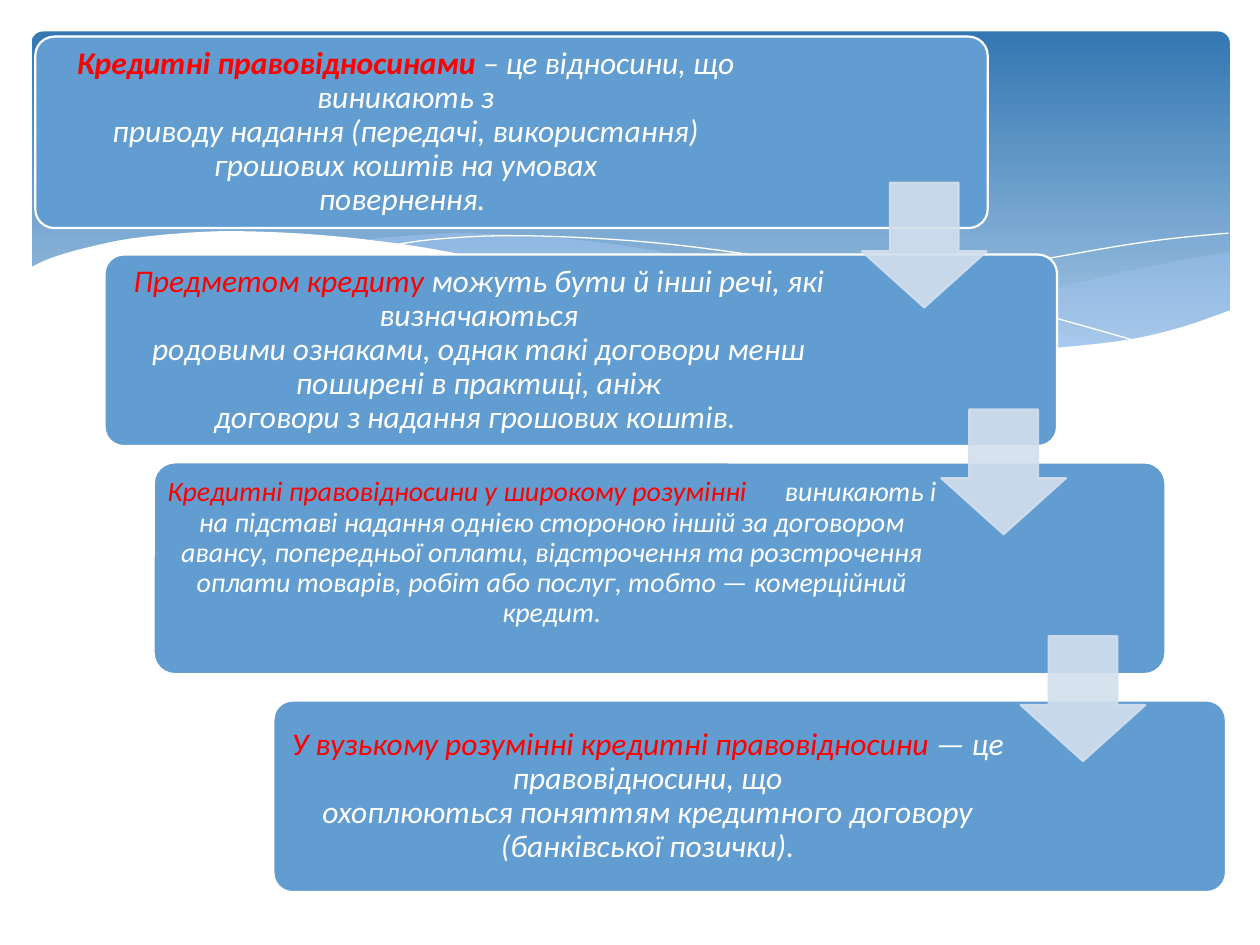
from dataclasses import dataclass

from lxml import etree
from pptx import Presentation
from pptx import util as u
from pptx.dml.color import RGBColor
from pptx.enum import shapes, text
from pptx.oxml import ns


@dataclass(frozen=True)
class Theme:
    """Colours, font and type sizes of the slide."""
    white: str = "FFFFFF"
    sky_top: str = "3477B2"
    sky_bottom: str = "A1C4E3"
    wave: str = "ACCBF9"
    box: str = "629DD1"
    arrow: str = "D3DFEE"
    term: str = "FF0000"
    font: str = "Calibri"
    large: int = 18
    small: int = 16
    outline: float = 1.25


THEME = Theme()

WAVE_RIGHT = [
    [(9.76, 2), (9.35, 2.07), (8.91, 2.16), (8.32, 2.3), (7.53, 2.48), (6.61, 2.65)],
    [(6.61, 2.65), (7.19, 2.72), (7.69, 2.77), (8.14, 2.78), (8.63, 2.75),
     (9.05, 2.69), (9.42, 2.59), (9.76, 2.47)],
]
WAVE_MIDDLE = [
    [(8.93, 2.73), (8.37, 2.65), (7.75, 2.54), (7.06, 2.4), (6.29, 2.22), (5.69, 2.08),
     (5.14, 1.98), (4.65, 1.91), (4.2, 1.87), (3.61, 1.85), (3.13, 1.88), (2.86, 1.91)],
    [(2.86, 1.91), (3.42, 1.99), (4.04, 2.11), (4.91, 2.32), (5.66, 2.48), (6.34, 2.61),
     (6.95, 2.7), (7.48, 2.76), (8.07, 2.78), (8.57, 2.77), (8.93, 2.73)],
]
WAVE_LINES = [
    [(3.09, 1.95), (3.44, 1.9), (4.01, 1.87), (4.69, 1.89), (5.33, 1.94), (6.08, 2.04),
     (6.95, 2.19), (7.95, 2.41), (9.07, 2.72)],
    [(6.13, 2.57), (6.95, 2.35), (7.76, 2.16), (8.66, 1.99), (9.24, 1.9), (9.75, 1.85)],
]
WAVE_FRONT = [
    [(9.77, 2.46), (9.4, 2.59), (8.99, 2.69), (8.5, 2.75), (8.09, 2.77), (7.44, 2.74),
     (6.68, 2.65), (5.79, 2.5), (5.03, 2.33), (4.18, 2.13), (3.4, 1.97), (2.71, 1.88),
     (2.11, 1.84), (1.61, 1.84), (1.06, 1.89), (0.67, 1.97), (0.4, 2.05), (0.23, 2.13)],
    [(0.23, 3.29), (9.77, 3.29)],
]

STATEMENTS = [
    ((0.28, 0.29, 7.56, 1.52), 5.88, THEME.large, "Кредитні правовідносинами ",
     "– це відносини, що виникають з\nприводу надання (передачі, використання) "
     "грошових коштів на умовах\nповернення. "),
    ((0.83, 2.02, 7.56, 1.52), 5.94, THEME.large, "Предметом кредиту ",
     "можуть бути й інші речі, які визначаються\nродовими ознаками, однак такі "
     "договори менш поширені в практиці, аніж\nдоговори з надання грошових коштів. "),
    ((1.22, 3.67, 8.03, 1.68), 6.32, THEME.small,
     "Кредитні правовідносини у широкому розумінні ",
     "виникають і на підставі надання однією стороною іншій за договором авансу, "
     "попередньої оплати, відстрочення та розстрочення\nоплати товарів, робіт або "
     "послуг, тобто — комерційний кредит."),
    ((2.17, 5.56, 7.56, 1.52), 5.94, THEME.large,
     "У вузькому розумінні кредитні правовідносини ",
     "— це правовідносини, що\nохоплюються поняттям кредитного договору "
     "(банківської позички)."),
]


def smooth_curve(points, steps=4):
    """Return points sampled along a Catmull-Rom curve through the given ones."""
    if len(points) < 3:
        return points
    padded = [points[0], *points, points[-1]]
    curve = [points[0]]
    for a, b, c, d in zip(padded, padded[1:], padded[2:], padded[3:]):
        for step in range(1, steps + 1):
            t = step / steps
            curve.append(tuple(
                q + t / 2 * (r - p + t * (2 * p - 5 * q + 4 * r - s + t * (3 * (q - r) + s - p)))
                for p, q, r, s in zip(a, b, c, d)))
    return curve


def paint(shape, fill=None, line=None, width=0, opacity=100):
    """Set fill, outline and opacity of a shape and drop its shadow."""
    shape.shadow.inherit = False
    for part, color in ((shape.fill, fill), (shape.line.fill, line)):
        if color is None:
            part.background()
        else:
            part.solid()
            part.fore_color.rgb = RGBColor.from_string(color)
    if line:
        shape.line.width = u.Pt(width)
    if opacity < 100:
        for color in shape.element.spPr.iter(ns.qn("a:srgbClr")):
            etree.SubElement(color, ns.qn("a:alpha"), val=str(opacity * 1000))


def add_preset(slide, kind, box, adjustments):
    """Add a preset shape with its box in inches and its adjustments."""
    shape = slide.shapes.add_shape(kind, *map(u.Inches, box))
    for index, value in enumerate(adjustments):
        shape.adjustments[index] = value
    return shape


def add_wave(slide, curves, closed=True, **style):
    """Add a freeform made of smooth curves joined end to end."""
    points = [(u.Inches(x), u.Inches(y)) for curve in curves for x, y in smooth_curve(curve)]
    builder = slide.shapes.build_freeform(*points[0])
    builder.add_line_segments(points[1:], close=closed)
    paint(builder.convert_to_shape(), **style)


def add_backdrop(slide):
    """Add the gradient panel and the waves over it."""
    panel = add_preset(slide, shapes.MSO_SHAPE.ROUNDED_RECTANGLE, (0.25, 0.25, 9.51, 2.7), [0.034])
    paint(panel)
    panel.fill.gradient()
    panel.fill.gradient_angle = 270
    stops = ((0, THEME.sky_top), (0.9, THEME.sky_bottom))
    for stop, (position, color) in zip(panel.fill.gradient_stops, stops):
        stop.position = position
        stop.color.rgb = RGBColor.from_string(color)
    add_wave(slide, WAVE_RIGHT, fill=THEME.wave, opacity=29)
    add_wave(slide, WAVE_MIDDLE, fill=THEME.wave, opacity=40)
    for curve in WAVE_LINES:
        add_wave(slide, [curve], closed=False, line=THEME.white)
    add_wave(slide, WAVE_FRONT, fill=THEME.white)


def add_run(paragraph, words, size, color, bold=False):
    """Add an italic run to a paragraph and return it."""
    run = paragraph.add_run()
    run.text = words
    font = run.font
    font.name, font.size, font.italic, font.bold = THEME.font, u.Pt(size), True, bold
    font.color.rgb = RGBColor.from_string(color)
    return run


def add_statement(slide, box, text_width, size, term, body, bold=False, gap=0, lift=0):
    """Add a rounded box and its text, which opens with a highlighted term."""
    panel = add_preset(slide, shapes.MSO_SHAPE.ROUNDED_RECTANGLE, box, [0.1])
    paint(panel, THEME.box, THEME.white, THEME.outline)
    left, top, _, height = box
    frame = slide.shapes.add_textbox(*map(u.Inches, (left, top, text_width, height))).text_frame
    frame.word_wrap = True
    frame.vertical_anchor = text.MSO_ANCHOR.MIDDLE
    frame.margin_left = frame.margin_right = frame.margin_top = u.Inches(0.07)
    frame.margin_bottom = u.Inches(0.07 + lift)
    paragraph = frame.paragraphs[0]
    paragraph.alignment = text.PP_ALIGN.CENTER
    paragraph.line_spacing = 0.9
    add_run(paragraph, term.rstrip(), size, THEME.term, bold)
    space = add_run(paragraph, " ", size, THEME.term, bold)
    if gap:
        space.font._element.set("spc", str(gap * 100))
    for index, line in enumerate(body.split("\n")):
        if index:
            paragraph.add_line_break()
        add_run(paragraph, line, size, THEME.white)


def add_arrow(slide, left, top):
    """Add a translucent arrow that leads to the next box."""
    arrow = add_preset(slide, shapes.MSO_SHAPE.DOWN_ARROW, (left, top, 0.99, 0.99), [0.55, 0.45])
    paint(arrow, THEME.arrow, THEME.arrow, THEME.outline, opacity=90)


def main():
    """Build the slide and save it."""
    presentation = Presentation()
    presentation.slide_width, presentation.slide_height = u.Inches(10), u.Inches(7.5)
    slide = presentation.slides.add_slide(presentation.slide_layouts[6])
    add_backdrop(slide)
    extras = [{"bold": True}, {}, {"gap": 18, "lift": 0.24}, {}]
    for statement, extra in zip(STATEMENTS, extras):
        add_statement(slide, *statement, **extra)
    for index in range(3):
        add_arrow(slide, 6.84 + 0.63 * index, 1.45 + 1.8 * index)
    presentation.save("out.pptx")


if __name__ == "__main__":
    main()
